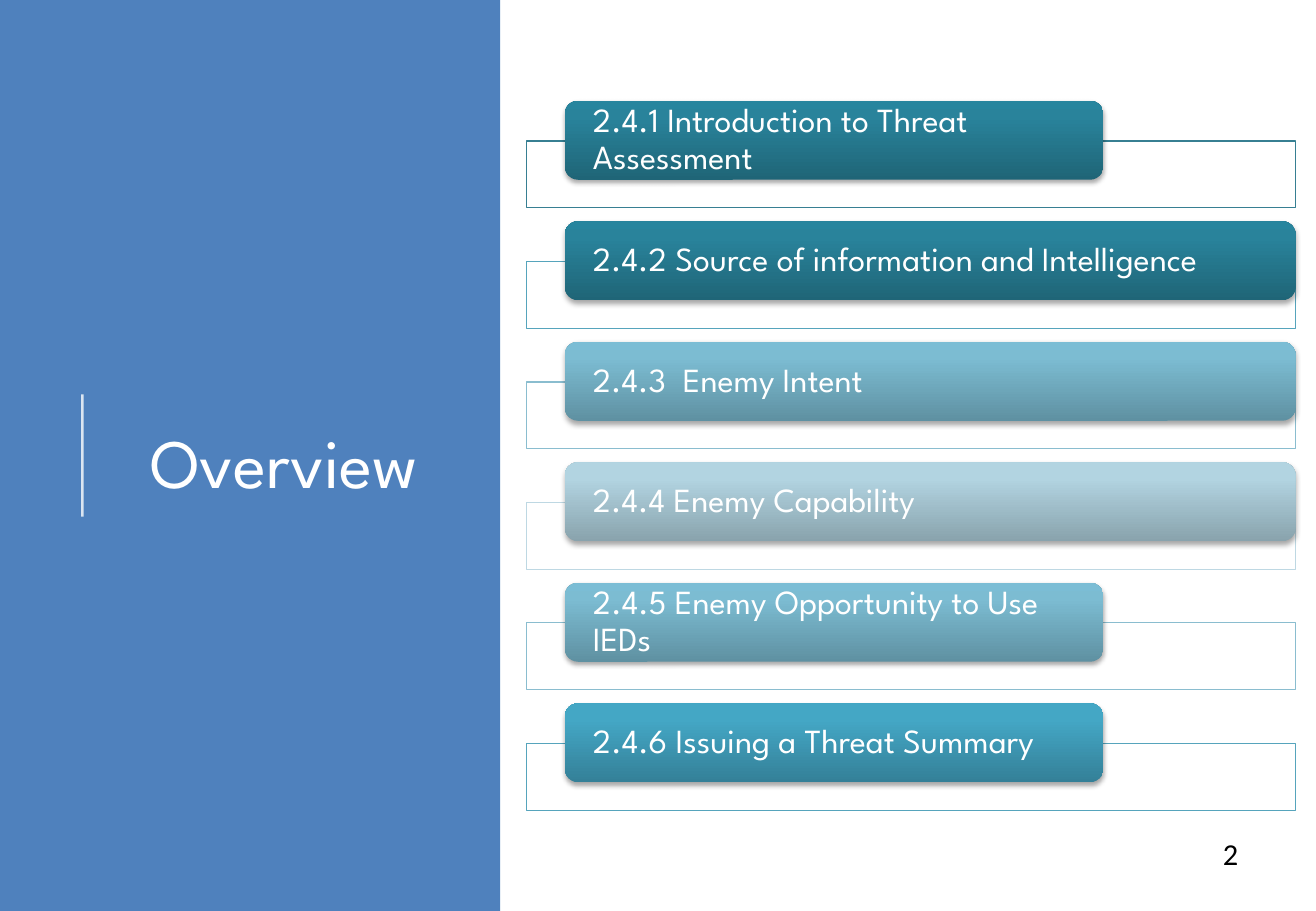
from copy import deepcopy
from dataclasses import dataclass

from lxml import etree
from pptx import Presentation
from pptx.dml.color import RGBColor
from pptx.enum.shapes import MSO_CONNECTOR, MSO_SHAPE
from pptx.enum.text import MSO_ANCHOR, MSO_AUTO_SIZE, PP_ALIGN
from pptx.oxml.ns import qn
from pptx.util import Inches, Pt

RECT, ROUNDED = MSO_SHAPE.RECTANGLE, MSO_SHAPE.ROUNDED_RECTANGLE
STRAIGHT = MSO_CONNECTOR.STRAIGHT
TOP, MIDDLE = MSO_ANCHOR.TOP, MSO_ANCHOR.MIDDLE
LEFT, CENTER, RIGHT = PP_ALIGN.LEFT, PP_ALIGN.CENTER, PP_ALIGN.RIGHT
NO_FIT = MSO_AUTO_SIZE.NONE

SLIDE_W, SLIDE_H = 10.83, 7.5
PANEL_SHARE = 0.38


@dataclass(frozen=True)
class Theme:
    panel: str = "4F81BD"
    white: str = "FFFFFF"
    black: str = "000000"
    heading_font: str = "League Spartan"
    number_font: str = "Calibri"
    title_size: float = 41
    topic_size: float = 20
    number_size: float = 18


THEME = Theme()

# Gradient from bottom to top: colours at 0, 80 and 100 percent
STOPS = (0, 0.8, 1)
DEEP = ("1F6577", "29839B", "27859E")
SOFT = ("5F91A2", "7CBCD2", "7BBDD5")
PALE = ("89A3AD", "B2D4E1", "B2D5E3")
BRIGHT = ("348098", "44A7C5", "42A9C8")

# Topic, bar width as a share of its frame, bar gradient, frame line
SHORT, LONG = 0.7, 0.95
TOPICS = [
    ("2.4.1 Introduction to Threat Assessment", SHORT, DEEP, "377F92"),
    ("2.4.2 Source of information and Intelligence", LONG, DEEP, "56A4BC"),
    ("2.4.3  Enemy Intent", LONG, SOFT, "8ABDCF"),
    ("2.4.4 Enemy Capability", LONG, PALE, "BED8E3"),
    ("2.4.5 Enemy Opportunity to Use IEDs", SHORT, SOFT, "8ABDCF"),
    ("2.4.6 Issuing a Threat Summary", SHORT, BRIGHT, "56A4BC"),
]


def rgb(value):
    return RGBColor.from_string(value)


def write(shape, text, size, font=THEME.heading_font, color=THEME.white,
          align=LEFT, anchor=MIDDLE, inset=(0.1, 0.05), spacing=1.0):
    tf = shape.text_frame
    tf.word_wrap = True
    tf.auto_size = NO_FIT
    tf.vertical_anchor = anchor
    tf.margin_left = tf.margin_right = Inches(inset[0])
    tf.margin_top = tf.margin_bottom = Inches(inset[1])
    p = tf.paragraphs[0]
    p.alignment, p.line_spacing = align, spacing
    r = p.add_run()
    r.text = text
    r.font.name, r.font.size = font, Pt(size)
    r.font.color.rgb = rgb(color)


def add_box(slide, kind, x, y, w, h, fill=None, line=None):
    s = slide.shapes.add_shape(kind, Inches(x), Inches(y), Inches(w), Inches(h))
    s.shadow.inherit = False
    if fill:
        s.fill.solid()
        s.fill.fore_color.rgb = rgb(fill)
    else:
        s.fill.background()
    if line:
        s.line.color.rgb = rgb(line)
        s.line.width = Pt(0.75)
    else:
        s.line.fill.background()
    return s


def set_alpha(parent, percent):
    """Give the first RGB colour below parent an opacity."""
    color = next(parent.iter(qn("a:srgbClr")))
    etree.SubElement(color, qn("a:alpha"), val=str(percent * 1000))


def add_gradient(shape, colors):
    shape.fill.gradient()
    shape.fill.gradient_angle = 90
    stop_list = next(shape._element.spPr.iter(qn("a:gsLst")))
    stop_list.append(deepcopy(stop_list[-1]))
    for stop, position, color in zip(shape.fill.gradient_stops, STOPS, colors):
        stop.position = position
        stop.color.rgb = rgb(color)


def add_shadow(shape):
    effects = shape._element.spPr.find(qn("a:effectLst"))
    shadow = etree.SubElement(
        effects, qn("a:outerShdw"), blurRad=str(Pt(3.1)), dist=str(Pt(1.8)),
        dir="5400000", rotWithShape="0")
    etree.SubElement(shadow, qn("a:srgbClr"), val=THEME.black)
    set_alpha(shadow, 35)


def title_panel(slide, x, y, w, h):
    panel = add_box(slide, RECT, x, y, w, h, fill=THEME.panel)
    slide.shapes._spTree.insert(2, panel._element)  # behind the title

    rule_x = Inches(x + 0.165 * w)
    rule = slide.shapes.add_connector(
        STRAIGHT, rule_x, Inches(y + 0.567 * h), rule_x, Inches(y + 0.433 * h))
    rule.line.color.rgb = rgb(THEME.white)
    rule.line.width = Pt(1.5)
    spPr = rule._element.spPr
    set_alpha(spPr, 80)
    etree.SubElement(spPr, qn("a:effectLst"))

    title = slide.shapes.title
    title.left, title.top = Inches(x + 0.204 * w), Inches(y + 0.104 * h)
    title.width, title.height = Inches(0.729 * w), Inches(0.803 * h)
    write(title, "Overview", THEME.title_size, align=CENTER)


def topic_list(slide, x, y, w, h):
    """Stack one framed bar per topic; each bar overlaps its frame's top edge."""
    bar_h, frame_h, frame_drop = 0.65, 0.55, 0.33
    pitch = (h - frame_drop - frame_h) / (len(TOPICS) - 1)
    for i, (topic, share, colors, line) in enumerate(TOPICS):
        top = y + i * pitch
        frame = add_box(slide, RECT, x, top + frame_drop, w, frame_h,
                        fill=THEME.white, line=line)
        set_alpha(frame._element.spPr, 90)
        bar = add_box(slide, ROUNDED, x + 0.05 * w, top, share * w, bar_h)
        add_gradient(bar, colors)
        add_shadow(bar)
        write(bar, topic, THEME.topic_size, inset=(0.2, 0.03), spacing=0.9)


def page_number(slide, x, y, w, h):
    s = slide.shapes.add_textbox(Inches(x), Inches(y), Inches(w), Inches(h))
    write(s, "2", THEME.number_size, font=THEME.number_font,
          color=THEME.black, align=RIGHT, anchor=TOP)


def main():
    prs = Presentation()
    prs.slide_width, prs.slide_height = Inches(SLIDE_W), Inches(SLIDE_H)
    slide = prs.slides.add_slide(prs.slide_layouts.get_by_name("Title Only"))
    title_panel(slide, 0, 0, PANEL_SHARE * SLIDE_W, SLIDE_H)
    topic_list(slide, 0.4 * SLIDE_W, 0.83, 6.33, 5.84)
    page_number(slide, 7.76, 6.83, 2.53, 0.4)
    prs.save("out.pptx")


if __name__ == "__main__":
    main()
